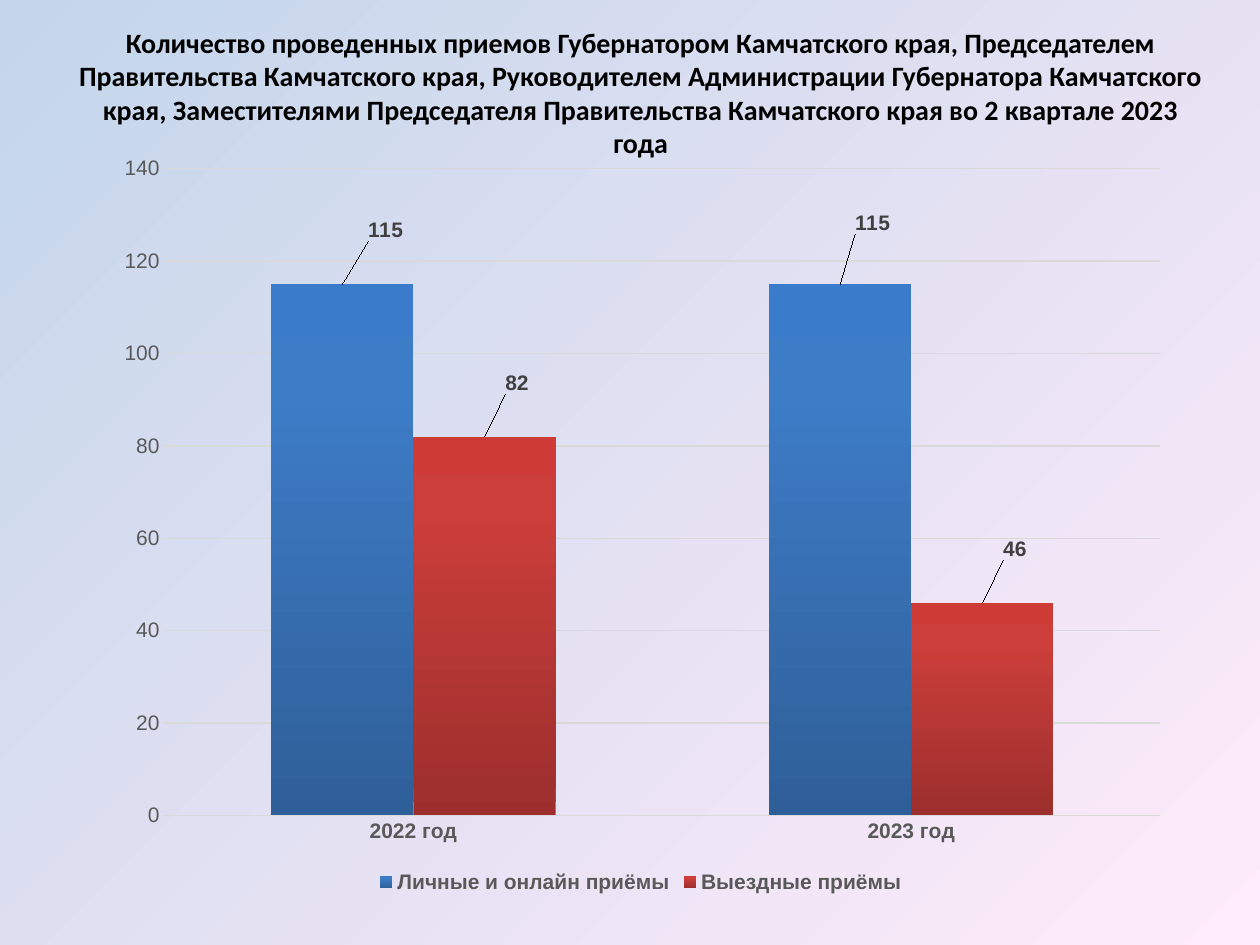
"""Build a slide comparing receptions held in 2022 and 2023 as a column chart."""
from copy import deepcopy

from lxml.etree import SubElement
from pptx import Presentation
from pptx.chart.data import CategoryChartData
from pptx.dml.color import RGBColor
from pptx.enum.chart import XL_CHART_TYPE as ChartType
from pptx.enum.chart import XL_LABEL_POSITION as LabelPosition
from pptx.enum.chart import XL_LEGEND_POSITION as LegendPosition
from pptx.enum.chart import XL_TICK_MARK as TickMark
from pptx.enum.text import MSO_AUTO_SIZE as AutoSize
from pptx.enum.text import PP_ALIGN as Align
from pptx.oxml.ns import qn
from pptx.util import Inches, Pt

TITLE = (
    "Количество проведенных приемов Губернатором Камчатского края, "
    "Председателем Правительства Камчатского края, Руководителем "
    "Администрации Губернатора Камчатского края, Заместителями "
    "Председателя Правительства Камчатского края во 2 квартале 2023 года"
)
YEARS = ["2022 год", "2023 год"]
SERIES = [
    {
        "name": "Личные и онлайн приёмы",
        "values": [115, 115],
        "stops": [(0, "blue_dark"), (0.8, "blue_mid"), (1, "blue_light")],
        "label_shifts": [(0.04, -0.05), (0.03, -0.06)],
    },
    {
        "name": "Выездные приёмы",
        "values": [82, 46],
        "stops": [(0, "red_dark"), (0.8, "red_mid"), (1, "red_light")],
        "label_shifts": [(0.03, -0.05), (0.03, -0.05)],
    },
]
BACKGROUND_STOPS = [(0, "sky"), (1, "pink")]
PLOT_AREA = {"x": 0.06, "y": 0.03, "w": 0.92, "h": 0.86}
COLORS = {
    "sky": "C4D6EB", "pink": "FFEBFA", "black": "000000",
    "axis_text": "595959", "label_text": "404040", "grid": "D9D9D9",
    "blue_dark": "2F5F99", "blue_mid": "3D7CC7", "blue_light": "3A7CCB",
    "red_dark": "9C2F2D", "red_mid": "CB3E3A", "red_light": "CE3B37",
}


def color(name):
    return RGBColor.from_string(COLORS[name])


def style_font(font, size, color_name, bold=False, face="Arial"):
    font.name, font.size, font.bold = face, Pt(size), bold
    font.color.rgb = color(color_name)


def fill_gradient(fill, owner, stops, angle):
    fill.gradient()
    fill.gradient_angle = angle
    stop_list = next(owner.iter(qn("a:gsLst")))
    while len(stop_list) < len(stops):
        stop_list.append(deepcopy(stop_list[0]))
    for stop, (position, name) in zip(fill.gradient_stops, stops):
        stop.position = position
        stop.color.rgb = color(name)


def set_layout(layout, **settings):
    for old in list(layout):
        layout.remove(old)
    manual = SubElement(layout, qn("c:manualLayout"))
    for tag, value in settings.items():
        SubElement(manual, qn(f"c:{tag}")).set("val", str(value))


def add_title(slide):
    box = slide.shapes.add_textbox(Inches(0.5), Inches(0.15), Inches(9.17), Inches(0.91))
    frame = box.text_frame
    frame.word_wrap = True
    frame.auto_size = AutoSize.SHAPE_TO_FIT_TEXT
    para = frame.paragraphs[0]
    para.text = TITLE
    para.alignment = Align.CENTER
    style_font(para.font, 16, "black", True, "Calibri")


def style_axes(chart):
    for axis, bold in ((chart.category_axis, True), (chart.value_axis, False)):
        axis.major_tick_mark = axis.minor_tick_mark = TickMark.NONE
        style_font(axis.tick_labels.font, 12, "axis_text", bold)
    line = chart.category_axis.format.line
    line.color.rgb, line.width = color("grid"), Pt(1)
    values = chart.value_axis
    values.minimum_scale, values.maximum_scale, values.major_unit = 0, 140, 20
    values.format.line.fill.background()
    grid = values.major_gridlines.format.line
    grid.color.rgb, grid.width = color("grid"), Pt(0.75)


def style_series(series, content):
    series.invert_if_negative = False
    fill_gradient(series.format.fill, series._element, content["stops"], 90)
    labels = series.data_labels
    labels.show_value = True
    labels.position = LabelPosition.OUTSIDE_END
    style_font(labels.font, 12, "label_text", True)
    for index, (x, y) in enumerate(content["label_shifts"]):
        label = series.points[index].data_label
        style_font(label.font, 12, "label_text", True)
        label.position = LabelPosition.OUTSIDE_END
    for label, (x, y) in zip(series._element.iter(qn("c:dLbl")), content["label_shifts"]):
        layout = SubElement(label, qn("c:layout"))
        label.insert(1, layout)
        set_layout(layout, x=x, y=y)


def add_receptions_chart(slide):
    data = CategoryChartData()
    data.categories = YEARS
    for content in SERIES:
        data.add_series(content["name"], content["values"])
    chart = slide.shapes.add_chart(
        ChartType.COLUMN_CLUSTERED,
        Inches(0.79), Inches(1.16), Inches(8.59), Inches(5.97), data,
    ).chart
    style_font(chart.font, 10, "black")
    chart.has_title = False
    chart.has_legend = True
    chart.legend.position = LegendPosition.BOTTOM
    chart.legend.include_in_layout = False
    style_font(chart.legend.font, 12, "axis_text", True)
    style_axes(chart)
    plot = chart.plots[0]
    plot.gap_width, plot.overlap, plot.vary_by_categories = 150, 0, False
    for series, content in zip(plot.series, SERIES):
        style_series(series, content)
    area = next(chart._chartSpace.iter(qn("c:plotArea")))
    layout = area.find(qn("c:layout"))
    if layout is None:
        layout = SubElement(area, qn("c:layout"))
        area.insert(0, layout)
    set_layout(layout, layoutTarget="inner", xMode="edge", yMode="edge", **PLOT_AREA)


def main():
    deck = Presentation()
    deck.slide_width, deck.slide_height = Inches(10), Inches(7.5)
    slide = deck.slides.add_slide(deck.slide_layouts[6])
    fill_gradient(slide.background.fill, slide._element, BACKGROUND_STOPS, 315)
    add_title(slide)
    add_receptions_chart(slide)
    deck.save("out.pptx")


if __name__ == "__main__":
    main()
